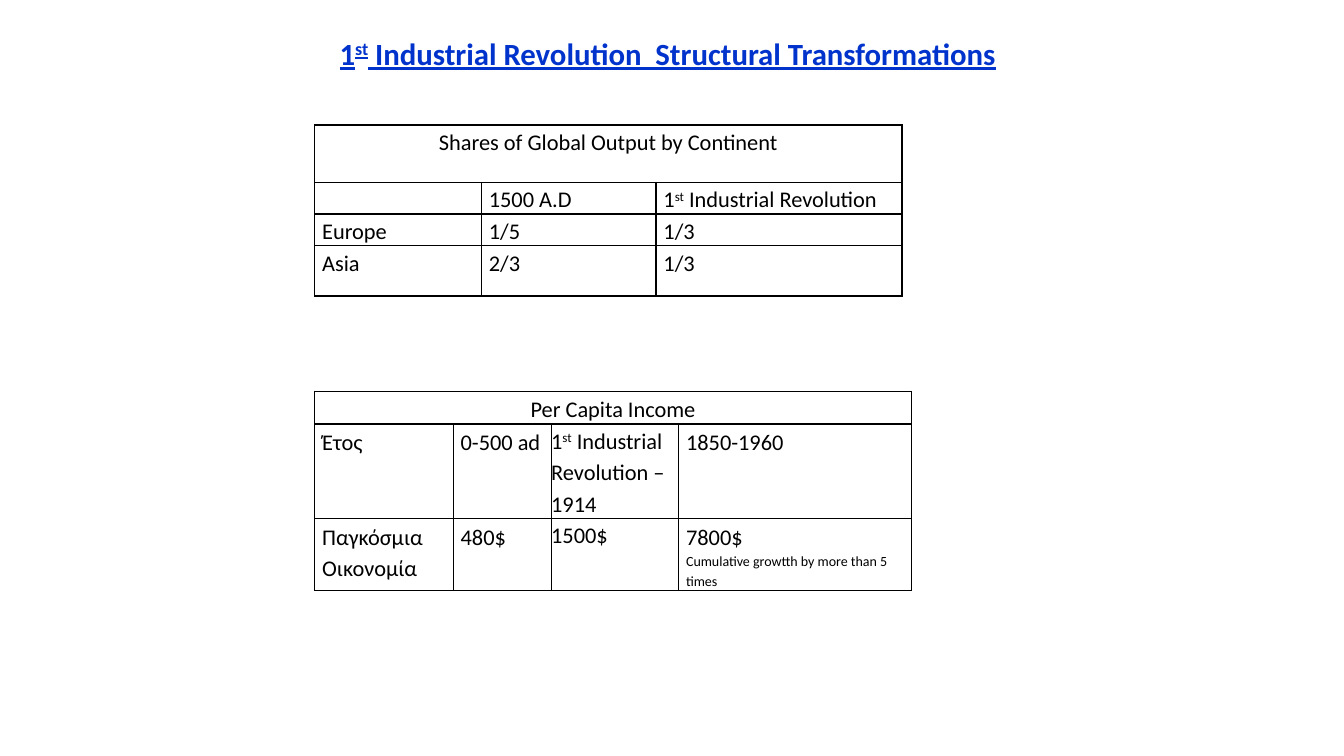
from lxml.etree import SubElement
from pptx import Presentation
from pptx.dml.color import RGBColor
from pptx.enum.text import MSO_ANCHOR, PP_ALIGN
from pptx.oxml.ns import qn
from pptx.util import Cm, Pt

COLORS = {"title": "0033CC", "text": "000000", "border": "000000", "cell": "FFFFFF"}


def write(p, text, size=16, color="text", bold=False, underline=False,
          align=PP_ALIGN.LEFT, spacing=1.15):
    """Fill a paragraph; text between carets is superscript."""
    p.alignment = align
    p.line_spacing = spacing
    p.font.size = Pt(size)
    for i, part in enumerate(text.split("^")):
        if not part:
            continue
        r = p.add_run()
        r.text = part
        f = r.font
        f.name, f.size, f.bold, f.underline = "Calibri", Pt(size), bold, underline
        f.color.rgb = RGBColor.from_string(COLORS[color])
        if i % 2:
            r._r.get_or_add_rPr().set("baseline", "30000")


def format_cell(cell, margins):
    """Set margins, a thin border on every side and a plain fill."""
    (cell.margin_left, cell.margin_top,
     cell.margin_right, cell.margin_bottom) = [Cm(m) for m in margins]
    tcPr = cell._tc.get_or_add_tcPr()
    for side in ("lnL", "lnR", "lnT", "lnB"):
        ln = SubElement(tcPr, qn(f"a:{side}"), w=str(Pt(1)))
        fill = SubElement(ln, qn("a:solidFill"))
        SubElement(fill, qn("a:srgbClr"), val=COLORS["border"])
    cell.fill.solid()
    cell.fill.fore_color.rgb = RGBColor.from_string(COLORS["cell"])


prs = Presentation()
prs.slide_width, prs.slide_height = Cm(33.87), Cm(19.05)
s = prs.slides.add_slide(prs.slide_layouts[5])

# Title
title = s.shapes.title
title.left, title.top, title.width, title.height = Cm(6.73), Cm(0.74), Cm(20.19), Cm(1.8)
tf = title.text_frame
tf.word_wrap = True
tf.vertical_anchor = MSO_ANCHOR.TOP
write(tf.paragraphs[0], "1^st^ Industrial Revolution  Structural Transformations",
      size=22, color="title", bold=True, underline=True,
      align=PP_ALIGN.CENTER, spacing=1.0)

# Table contents: the first row is a heading across all columns
tables = [
    {"top": 3.15, "cols": [4.2, 4.4, 6.2], "rows": [1.45, 0.74, 0.74, 1.27],
     "margin_top": 0, "tight_col": None,
     "cells": [["Shares of Global Output by Continent"],
               ["", "1500 A.D", "1^st^ Industrial Revolution"],
               ["Europe", "1/5", "1/3"],
               ["Asia", "2/3", "1/3"]]},
    {"top": 9.86, "cols": [3.49, 2.47, 3.21, 5.87], "rows": [0.76, 2.34, 1.7],
     "margin_top": 0.03, "tight_col": 2,
     "cells": [["Per Capita Income"],
               ["Έτος", "0-500 ad", "1^st^ Industrial Revolution –1914", "1850-1960"],
               ["Παγκόσμια Οικονομία", "480$", "1500$", "7800$"]]},
]

# Tables
for t in tables:
    cols, rows = t["cols"], t["rows"]
    table = s.shapes.add_table(len(rows), len(cols), Cm(7.93), Cm(t["top"]),
                               Cm(sum(cols)), Cm(sum(rows))).table
    table.first_row = table.horz_banding = False
    for col, width in zip(table.columns, cols):
        col.width = Cm(width)
    for row, height in zip(table.rows, rows):
        row.height = Cm(height)
    table.cell(0, 0).merge(table.cell(0, len(cols) - 1))
    for i, row in enumerate(table.rows):
        for j, cell in enumerate(row.cells):
            tight = i > 0 and j == t["tight_col"]
            format_cell(cell, (0,) * 4 if tight else (0.19, t["margin_top"], 0.19, 0))
            if j < len(t["cells"][i]):
                write(cell.text_frame.paragraphs[0], t["cells"][i][j],
                      align=PP_ALIGN.LEFT if i else PP_ALIGN.CENTER)

# Small remark under the last income figure
write(table.cell(2, 3).text_frame.add_paragraph(),
      "Cumulative growtth by more than 5 times", size=10)

prs.save("out.pptx")
